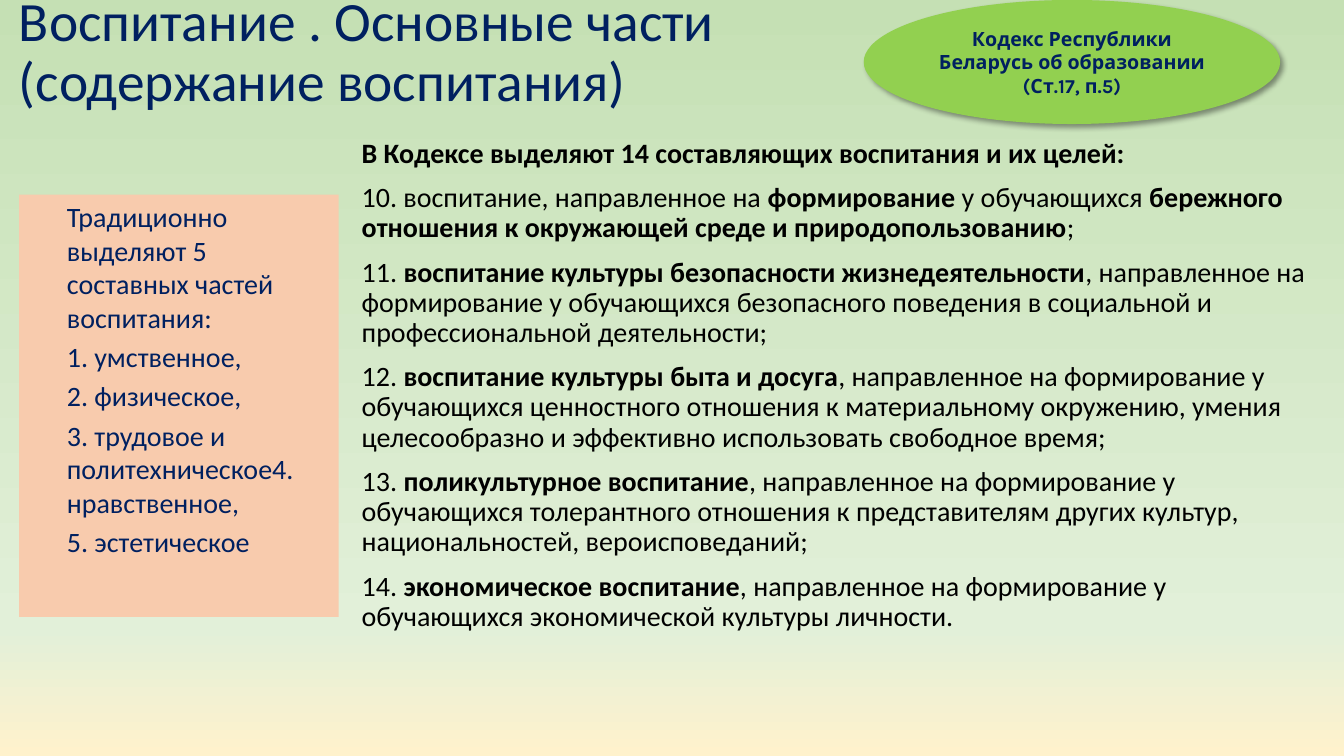
from lxml import etree
from pptx import Presentation
from pptx.dml.color import RGBColor
from pptx.enum import shapes, text
from pptx.oxml import ns
from pptx.util import Pt

# Content: parts between asterisks are bold
title = ["Воспитание . Основные части ", "(содержание воспитания)"]
badge = ["*Кодекс Республики Беларусь об образовании (Ст.17, п.5)*"]
parts = [
    "Традиционно выделяют 5 составных частей воспитания:",
    "1. умственное,",
    "2. физическое,",
    "3. трудовое и политехническое4. нравственное,",
    "5. эстетическое",
]
goals = [
    "*В Кодексе выделяют 14 составляющих воспитания и их целей:*",
    "10. воспитание, направленное на *формирование *у обучающихся "
    "*бережного отношения к окружающей среде и природопользованию*;",
    "11.* воспитание культуры безопасности жизнедеятельности*, направленное "
    "на формирование у обучающихся безопасного поведения в социальной "
    "и профессиональной деятельности;",
    "12. *воспитание культуры быта и досуга*, направленное на формирование "
    "у обучающихся ценностного отношения к материальному окружению, умения "
    "целесообразно и эффективно использовать свободное время;",
    "13. *поликультурное воспитание*, направленное на формирование "
    "у обучающихся толерантного отношения к представителям других культур, "
    "национальностей, вероисповеданий;",
    "14.* экономическое воспитание*, направленное на формирование "
    "у обучающихся экономической культуры личности.",
]
stops = [(0, "C5E0B4"), (83, "E2F0D9"), (100, "FFF2CC")]
navy, black = "002060", "000000"

deck = Presentation()
deck.slide_width, deck.slide_height = Pt(960), Pt(540)
slide = deck.slides.add_slide(deck.slide_layouts[6])


def color(code):
    return RGBColor.from_string(code)


def node(parent, tag, **attrs):
    item = etree.SubElement(parent, ns.qn(tag))
    for key, val in attrs.items():
        item.set(key, str(val))
    return item


def place(box, kind=None, fill=None):
    box = [Pt(n) for n in box]
    if kind is None:
        return slide.shapes.add_textbox(*box)
    shape = slide.shapes.add_shape(kind, *box)
    shape.shadow.inherit = False
    shape.fill.solid()
    shape.fill.fore_color.rgb = color(fill)
    shape.line.fill.background()
    return shape


def write(shape, lines, size, ink, font="Calibri", line=1.0, gap=0,
          indent=0, align=text.PP_ALIGN.LEFT, anchor=text.MSO_ANCHOR.TOP):
    frame = shape.text_frame
    frame.word_wrap = True
    frame.vertical_anchor = anchor
    for i, row in enumerate(lines):
        para = frame.add_paragraph() if i else frame.paragraphs[0]
        para.alignment = align
        para.line_spacing = line
        para.space_before = Pt(gap)
        if indent:
            para._p.get_or_add_pPr().set("marL", str(Pt(indent)))
        for j, part in enumerate(row.split("*")):
            if not part:
                continue
            run = para.add_run()
            run.text = part
            run.font.name, run.font.size = font, Pt(size)
            run.font.bold = j % 2 == 1
            run.font.color.rgb = color(ink)


# Background gradient, top to bottom
back = slide.background.fill
back.gradient()
grad = slide.background._cSld.find(".//" + ns.qn("a:gradFill"))
for child in list(grad):
    grad.remove(child)
band = node(grad, "a:gsLst")
for pos, code in stops:
    node(node(band, "a:gs", pos=pos * 1000), "a:srgbClr", val=code)
node(grad, "a:lin", ang=5400000, scaled=0)

# Title: one paragraph with a line break
head = place((6.5, 13.7, 673, 49))
head.text_frame.word_wrap = True
head.text_frame.vertical_anchor = text.MSO_ANCHOR.MIDDLE
para = head.text_frame.paragraphs[0]
para.text = "\n".join(title)
para.line_spacing = 0.9
for run in para.runs:
    run.font.name, run.font.size = "Calibri", Pt(39.6)
    run.font.color.rgb = color(navy)

# Goals of the Code
write(place((251.3, 95.8, 695.5, 348.5)), goals, 20, black, line=0.9, gap=10)

# Badge with a soft shadow
oval = place((617, 0, 297.4, 88.6), shapes.MSO_SHAPE.OVAL, "92D050")
write(oval, badge, 14, navy, font="Karla", align=text.PP_ALIGN.CENTER,
      anchor=text.MSO_ANCHOR.MIDDLE)
glow = oval._element.spPr.find(ns.qn("a:effectLst"))
cast = node(glow, "a:outerShdw", blurRad=Pt(4), dist=Pt(3), dir=2700000,
            algn="tl", rotWithShape=0)
node(node(cast, "a:srgbClr", val=black), "a:alpha", val=40000)

# Five traditional parts
panel = place((13.7, 139, 228.2, 301.7), shapes.MSO_SHAPE.RECTANGLE, "F8CBAD")
write(panel, parts, 20, navy, gap=4, indent=27)

deck.save("out.pptx")
